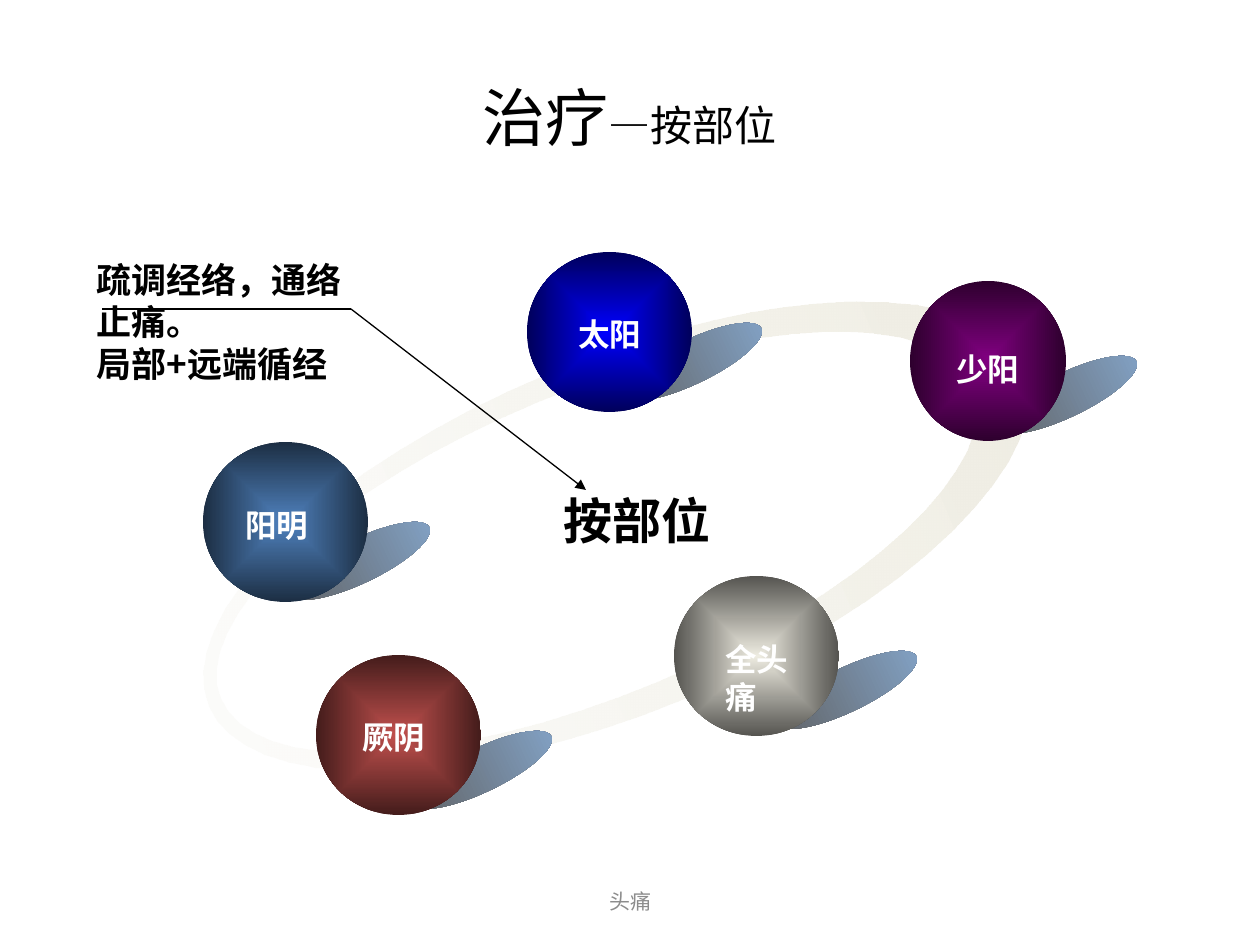
from math import cos, pi, sin

from lxml.etree import SubElement
from pptx import Presentation
from pptx.dml.color import RGBColor
from pptx.enum.shapes import MSO_CONNECTOR, MSO_SHAPE
from pptx.enum.text import MSO_ANCHOR, PP_ALIGN
from pptx.oxml import parse_xml
from pptx.oxml.ns import nsdecls, qn
from pptx.util import Pt

PX = 914400 // 126
BLACK = RGBColor(0x00, 0x00, 0x00)
WHITE = RGBColor(0xFF, 0xFF, 0xFF)
FOOTER_GRAY = RGBColor(0x8C, 0x8C, 0x8C)
SHADOW_DARK = RGBColor(0x5F, 0x5F, 0x5F)
SHADOW_BLUE = RGBColor(0x84, 0xA5, 0xCA)
RING_PALE = RGBColor(0xF8, 0xF7, 0xF3)
RING_CREAM = RGBColor(0xEE, 0xEC, 0xE1)
BLUE, NAVY = RGBColor(0x00, 0x00, 0xFF), RGBColor(0x00, 0x00, 0x5B)
STEEL, DARK_STEEL = RGBColor(0x4F, 0x81, 0xBD), RGBColor(0x1C, 0x2E, 0x43)
RED, DARK_RED = RGBColor(0xC0, 0x50, 0x4D), RGBColor(0x44, 0x1C, 0x1B)
DARK_CREAM = RGBColor(0x55, 0x54, 0x50)
PURPLE, DARK_PURPLE = RGBColor(0x80, 0x00, 0x80), RGBColor(0x2E, 0x00, 0x2E)

TITLE = [("治疗", 36), ("—按部位", 24)]
CENTER = "按部位"
CALLOUT = ["疏调经络，通络止痛。", "局部+远端循经"]
FOOTER = "头痛"
BALLS = [
    ("太阳", (527, 252, 165, 160), (566, 309), (614, 340), BLUE, NAVY),
    ("阳明", (203, 442, 165, 160), (233, 500), (282, 539), STEEL, DARK_STEEL),
    ("厥阴", (316, 655, 165, 160), (350, 712), (404, 748), RED, DARK_RED),
    ("全头痛", (674, 576, 165, 160), (713, 634), (769, 668), RING_CREAM, DARK_CREAM),
    ("少阳", (910, 281, 156, 160), (944, 344), (989, 373), PURPLE, DARK_PURPLE),
]
LABEL_SIZE = (103, 50)
SHADOW_SIZE = (155, 44)
SHADOW_TILT = -25.7
RING_OUTER = (616, 536, 441, 176)
RING_INNER = (596, 534, 407, 152)
RING_TILT = -22.6
RING_STEPS = 64


def emu(*lengths):
    return [length * PX for length in lengths]


def set_gradient(shape, start, end, direction, start_alpha=100):
    properties = shape._element.spPr
    geometry = properties.find(qn("a:prstGeom"))
    if geometry is None:
        geometry = properties.find(qn("a:custGeom"))
    geometry.addnext(parse_xml(
        f'<a:gradFill {nsdecls("a")} rotWithShape="1"><a:gsLst>'
        f'<a:gs pos="0"><a:srgbClr val="{start}"><a:alpha val="{start_alpha * 1000}"/></a:srgbClr></a:gs>'
        f'<a:gs pos="100000"><a:srgbClr val="{end}"/></a:gs>'
        f'</a:gsLst>{direction}</a:gradFill>'))
    shape.line.fill.background()
    shape.shadow.inherit = False


LINEAR = '<a:lin ang="0" scaled="1"/>'
RADIAL = '<a:path path="shape"><a:fillToRect l="50000" t="50000" r="50000" b="50000"/></a:path>'


def add_run(paragraph, text, size, font, color, bold=False):
    run = paragraph.add_run()
    run.text = text
    run.font.size = Pt(size)
    run.font.name = font
    run.font.color.rgb = color
    run.font.bold = bold


def add_text(slide, box, lines, size, font, color, bold=True,
             align=PP_ALIGN.LEFT, anchor=MSO_ANCHOR.TOP):
    frame = slide.shapes.add_textbox(*emu(*box)).text_frame
    frame.word_wrap = True
    frame.vertical_anchor = anchor
    for index, line in enumerate(lines):
        paragraph = frame.add_paragraph() if index else frame.paragraphs[0]
        paragraph.alignment = align
        add_run(paragraph, line, size, font, color, bold)


def ellipse_points(center_x, center_y, radius_x, radius_y, turn):
    angles = [turn * 2 * pi * step / RING_STEPS for step in range(RING_STEPS)]
    return [(round(PX * (center_x + radius_x * cos(angle))),
             round(PX * (center_y + radius_y * sin(angle)))) for angle in angles]


def add_ring(slide):
    outer = ellipse_points(*RING_OUTER, 1)
    inner = ellipse_points(*RING_INNER, -1)
    builder = slide.shapes.build_freeform(*outer[0])
    builder.add_line_segments(outer[1:], close=True)
    builder.move_to(*inner[0])
    builder.add_line_segments(inner[1:], close=True)
    ring = builder.convert_to_shape()
    ring.rotation = RING_TILT
    set_gradient(ring, RING_PALE, RING_CREAM, LINEAR, 36)


def add_ellipse(slide, box, start, end, direction):
    ellipse = slide.shapes.add_shape(MSO_SHAPE.OVAL, *emu(*box))
    set_gradient(ellipse, start, end, direction)
    return ellipse


def add_line(slide, *ends, arrow=False):
    connector = slide.shapes.add_connector(MSO_CONNECTOR.STRAIGHT, *emu(*ends))
    connector.line.color.rgb = BLACK
    connector.line.width = Pt(0.75)
    if arrow:
        SubElement(connector.line._get_or_add_ln(), qn("a:tailEnd"), type="triangle")
    SubElement(connector._element.spPr, qn("a:effectLst"))


def main():
    presentation = Presentation()
    presentation.slide_width, presentation.slide_height = emu(1260, 945)
    slide = presentation.slides.add_slide(presentation.slide_layouts[5])

    title = slide.shapes.title
    title.left, title.top, title.width, title.height = emu(63, 38, 1134, 157)
    title.text_frame.vertical_anchor = MSO_ANCHOR.MIDDLE
    paragraph = title.text_frame.paragraphs[0]
    paragraph.alignment = PP_ALIGN.CENTER
    for text, size in TITLE:
        add_run(paragraph, text, size, "Calibri", BLACK)

    add_ring(slide)
    for _, _, _, shadow_corner, _, _ in BALLS:
        shadow = add_ellipse(slide, shadow_corner + SHADOW_SIZE, SHADOW_DARK, SHADOW_BLUE, LINEAR)
        shadow.rotation = SHADOW_TILT
    for label, box, label_corner, _, inside, edge in BALLS:
        add_ellipse(slide, box, inside, edge, RADIAL)
        add_text(slide, label_corner + LABEL_SIZE, [label], 18, "DejaVu Sans", WHITE)

    add_text(slide, (470, 484, 334, 72), [CENTER], 28, "Calibri", BLACK, align=PP_ALIGN.CENTER)
    add_line(slide, 351, 309, 586, 490, arrow=True)
    add_line(slide, 351, 309, 102, 309)
    add_text(slide, (84, 252, 297, 47), CALLOUT, 20, "Noto Sans CJK SC", BLACK)
    add_text(slide, (431, 876, 399, 50), [FOOTER], 12, "Calibri", FOOTER_GRAY, bold=False,
             align=PP_ALIGN.CENTER, anchor=MSO_ANCHOR.MIDDLE)
    presentation.save("out.pptx")


if __name__ == "__main__":
    main()
